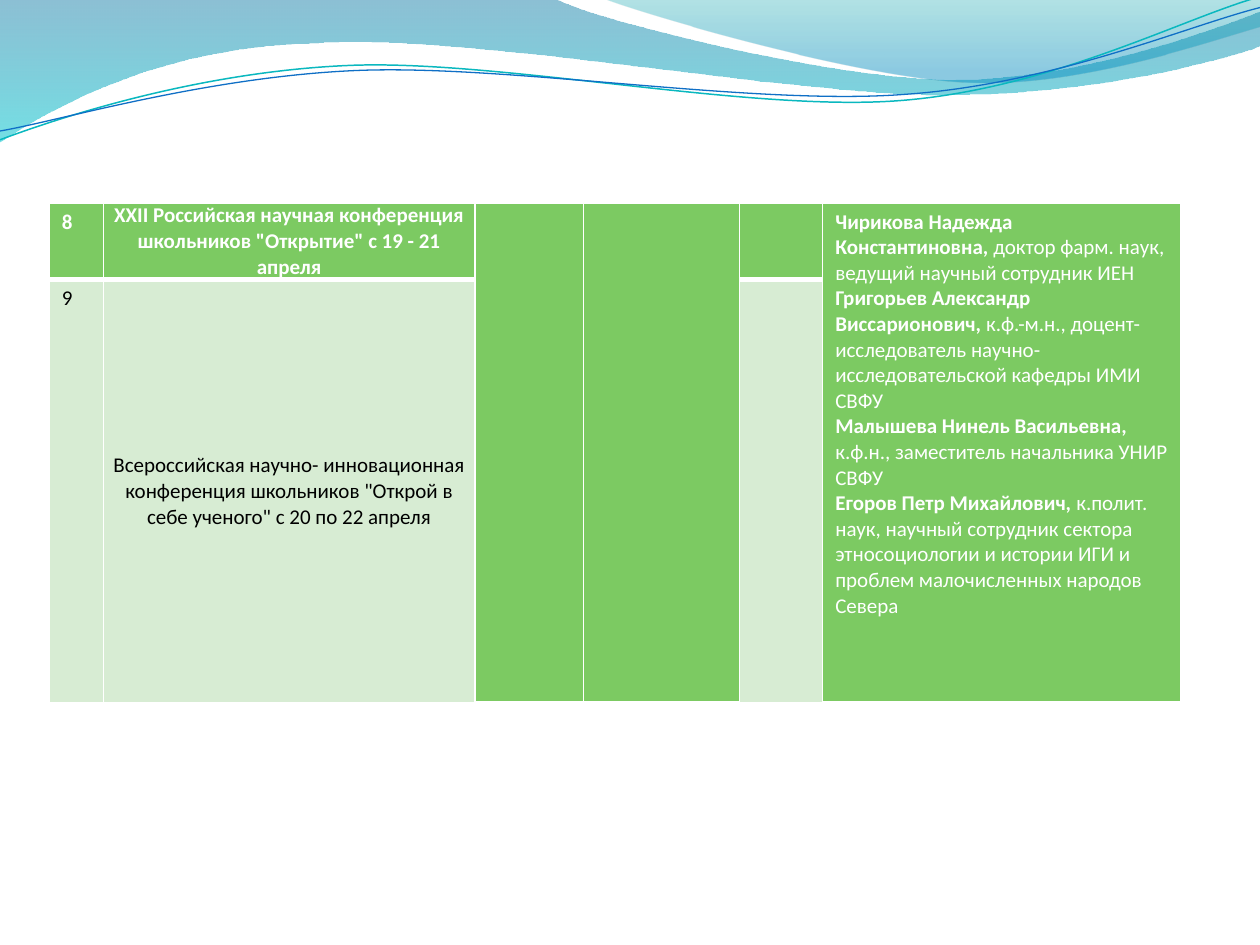
"""Slide with a table of school science conferences and their experts."""
from dataclasses import dataclass

from lxml import etree
from pptx import Presentation
from pptx import util as u
from pptx.dml.color import RGBColor
from pptx.enum import text
from pptx.oxml.ns import qn


@dataclass(frozen=True)
class Theme:
    """Colours, font and sizes of the slide."""
    font: str = "Calibri"
    size: int = 12
    white: str = "FFFFFF"
    black: str = "000000"
    green: str = "7CCA62"
    pale: str = "D7ECD3"
    teal_line: str = "0AB8BF"
    blue_line: str = "0F6FC6"
    wide_wave: tuple = ((0, "0074A1", 45), (1, "00C6CF", 55))
    right_wave: tuple = ((0, "00A1A9", 30), (0.8, "008BBF", 45))


THEME = Theme()
COLUMNS = (0.43, 2.95, 0.86, 1.24, 0.66, 2.84)
ROWS = (0.61, 3.36)
TABLE_LEFT, TABLE_TOP = 0.39, 1.61
SHARED_COLUMNS = (2, 3, 5)

WIDE_WAVE = [
    (0, 0), (4.4, -0.01), (4.76, 0.17, 6.64, 0.63, 7.58, 0.63),
    (8.53, 0.63, 9.58, 0.26, 10, 0.09), (10.01, 0.36),
    (9.83, 0.44, 8.7, 0.76, 7.46, 0.75), (6.22, 0.75, 3.82, 0.28, 2.57, 0.34),
    (1.29, 0.36, 0.46, 0.83, -0.01, 1.13)]
RIGHT_WAVE = [
    (4.79, -0.01), (5.09, 0.11, 6.82, 0.62, 7.69, 0.65),
    (8.56, 0.69, 9.61, 0.32, 10, 0.21), (10, 0)]
TEAL_LINE = [
    (0, 1.11), (0.48, 0.93, 1.58, 0.57, 2.77, 0.52),
    (3.95, 0.47, 5.93, 0.89, 7.13, 0.8), (8.33, 0.71, 9.38, 0.15, 9.98, -0.02)]
BLUE_LINE = [
    (0, 1.04), (0.47, 0.96, 1.64, 0.61, 2.83, 0.56),
    (4.03, 0.51, 5.97, 0.84, 7.17, 0.75), (8.36, 0.67, 9.41, 0.21, 10, 0.06)]

CONFERENCES = (
    ("8", 'ХХII Российская научная конференция школьников "Открытие" с 19 - 21 апреля'),
    ("9", "Всероссийская научно- инновационная конференция школьников "
          '"Открой в себе ученого" с 20 по 22 апреля'),
)
EXPERTS = (
    ("Чирикова Надежда Константиновна, ",
     "доктор фарм. наук, ведущий научный сотрудник ИЕН"),
    ("Григорьев Александр Виссарионович, ",
     "к.ф.-м.н., доцент-исследователь научно-исследовательской кафедры ИМИ СВФУ"),
    ("Малышева Нинель Васильевна, ",
     "к.ф.н., заместитель начальника УНИР СВФУ"),
    ("Егоров Петр Михайлович, ",
     "к.полит. наук, научный сотрудник сектора этносоциологии и истории ИГИ "
     "и проблем малочисленных народов Севера"),
)


def rgb(value):
    """Turn a hex string into a colour."""
    return RGBColor.from_string(value)


def add_outline(slide, segments, close):
    """Draw line and cubic curve segments as one freeform on the slide master."""
    points = [(u.Inches(s[i]), u.Inches(s[i + 1]))
              for s in segments for i in range(0, len(s), 2)]
    builder = slide.shapes.build_freeform(*points[0])
    builder.add_line_segments(points[1:], close=close)
    outline = builder.convert_to_shape()
    outline.shadow.inherit = False
    steps = iter(list(outline.element.iter(qn("a:lnTo"))))
    for segment in segments[1:]:
        first = next(steps)
        if len(segment) == 6:
            curve = etree.Element(qn("a:cubicBezTo"))
            first.addprevious(curve)
            for step in (first, next(steps), next(steps)):
                curve.append(step[0])
                step.getparent().remove(step)
    tree = slide.slide_layout.slide_master.shapes.element
    used = [int(node.get("id")) for node in tree.iter(qn("p:cNvPr"))]
    outline.element.nvSpPr.cNvPr.set("id", str(max(used) + 1))
    tree.append(outline.element)
    return outline


def add_wave(slide, segments, stops):
    """Draw a closed wave with a translucent vertical gradient."""
    wave = add_outline(slide, segments, close=True)
    wave.line.fill.background()
    wave.fill.gradient()
    wave.fill.gradient_angle = 270
    for stop, (position, colour, _) in zip(wave.fill.gradient_stops, stops):
        stop.position = position
        stop.color.rgb = rgb(colour)
    for node, (_, _, opacity) in zip(wave.element.spPr.iter(qn("a:srgbClr")), stops):
        etree.SubElement(node, qn("a:alpha"), val=str(opacity * 1000))


def add_wave_line(slide, segments, colour, width):
    """Draw an open curved line."""
    line = add_outline(slide, segments, close=False)
    line.fill.background()
    line.line.color.rgb = rgb(colour)
    line.line.width = u.Pt(width)


def write(frame, paragraphs, colour=THEME.white, align=text.PP_ALIGN.LEFT):
    """Fill a text frame with paragraphs of (wording, bold) runs."""
    for index, runs in enumerate(paragraphs):
        paragraph = frame.paragraphs[0] if index == 0 else frame.add_paragraph()
        paragraph.alignment = align
        for wording, bold in runs:
            run = paragraph.add_run()
            run.text = wording
            run.font.name = THEME.font
            run.font.size = u.Pt(THEME.size)
            run.font.bold = bold
            run.font.color.rgb = rgb(colour)


def style_cell(cell, fill, bottom):
    """Give a cell white borders and a solid fill."""
    properties = cell._tc.get_or_add_tcPr()
    for side, width in (("L", 1), ("R", 1), ("T", 1), ("B", bottom)):
        border = etree.SubElement(properties, qn(f"a:ln{side}"), w=str(u.Pt(width)))
        solid = etree.SubElement(border, qn("a:solidFill"))
        etree.SubElement(solid, qn("a:srgbClr"), val=THEME.white)
    cell.fill.solid()
    cell.fill.fore_color.rgb = rgb(fill)


def add_conference_table(slide):
    """Add the table of conferences and experts."""
    table = slide.shapes.add_table(
        len(ROWS), len(COLUMNS), u.Inches(TABLE_LEFT), u.Inches(TABLE_TOP),
        u.Inches(sum(COLUMNS)), u.Inches(sum(ROWS))).table
    table.first_row = table.horz_banding = False
    for column, width in zip(table.columns, COLUMNS):
        column.width = u.Inches(width)
    for row, height in zip(table.rows, ROWS):
        row.height = u.Inches(height)

    for r in range(len(ROWS)):
        for c in range(len(COLUMNS)):
            leading = r == 0 or c in SHARED_COLUMNS
            style_cell(table.cell(r, c), THEME.green if leading else THEME.pale,
                       bottom=3 if leading else 1)
    for c in SHARED_COLUMNS:
        table.cell(0, c).merge(table.cell(len(ROWS) - 1, c))

    for r, (number, conference) in enumerate(CONFERENCES):
        bold, colour = (True, THEME.white) if r == 0 else (False, THEME.black)
        write(table.cell(r, 0).text_frame, [[(number, bold)]], colour=colour)
        name = table.cell(r, 1)
        name.margin_left = name.margin_right = name.margin_top = name.margin_bottom = 0
        name.vertical_anchor = text.MSO_ANCHOR.MIDDLE
        write(name.text_frame, [[(conference, bold)]], colour=colour,
              align=text.PP_ALIGN.CENTER)
    write(table.cell(0, SHARED_COLUMNS[-1]).text_frame,
          [[(person, True), (post, False)] for person, post in EXPERTS])


def main():
    """Build and save the slide."""
    deck = Presentation()
    deck.slide_width, deck.slide_height = u.Inches(10), u.Inches(7.5)
    slide = deck.slides.add_slide(deck.slide_layouts[6])
    add_wave(slide, WIDE_WAVE, THEME.wide_wave)
    add_wave(slide, RIGHT_WAVE, THEME.right_wave)
    add_wave_line(slide, TEAL_LINE, THEME.teal_line, 0.85)
    add_wave_line(slide, BLUE_LINE, THEME.blue_line, 0.75)
    add_conference_table(slide)
    deck.save("out.pptx")


if __name__ == "__main__":
    main()
